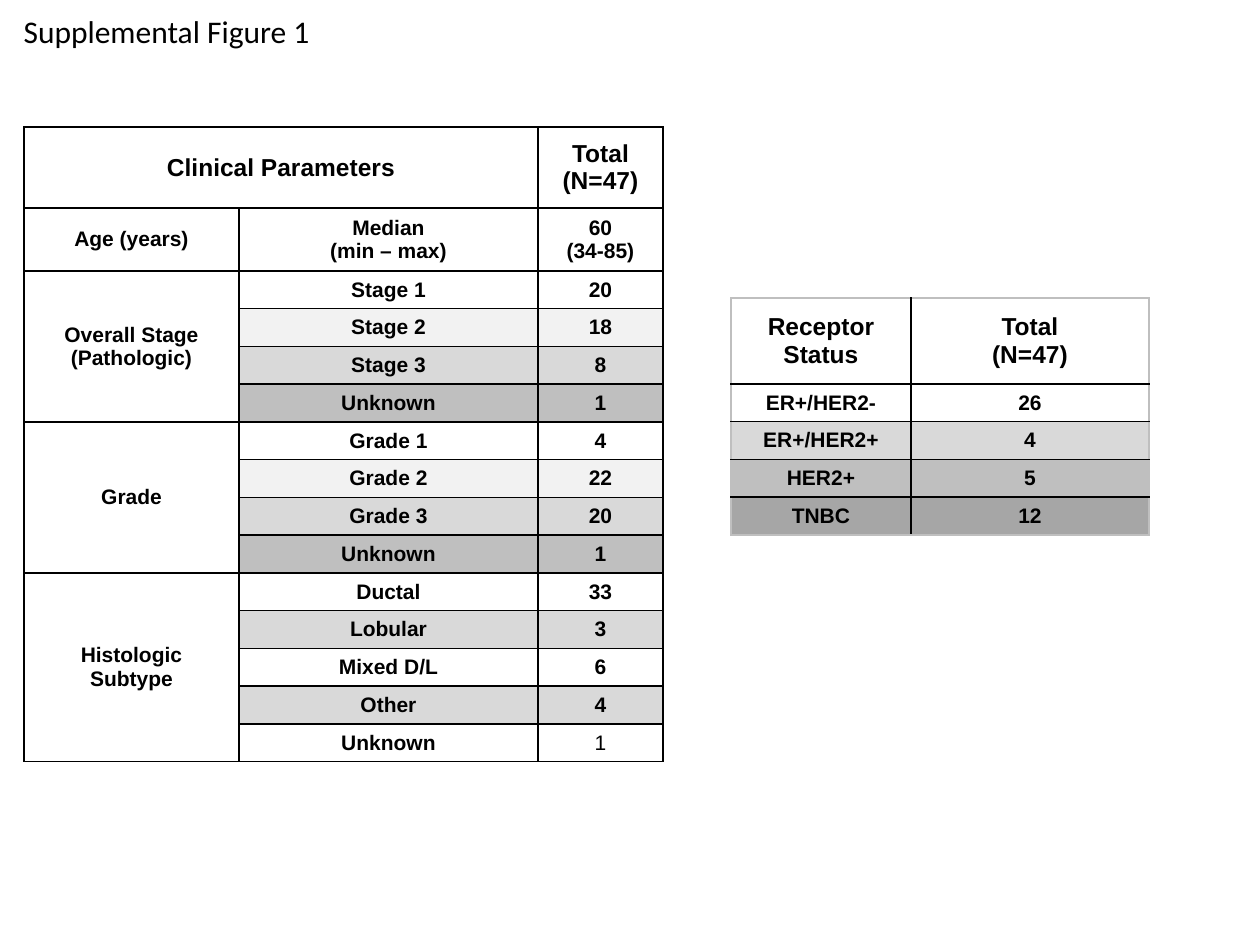
from lxml.etree import SubElement
from pptx import Presentation
from pptx.dml.color import RGBColor
from pptx.enum.text import MSO_ANCHOR, MSO_AUTO_SIZE, PP_ALIGN
from pptx.oxml.ns import qn
from pptx.util import Pt

PX = 914400 / 126
BLACK, WHITE = "000000", "FFFFFF"
PALE, LIGHT, MID, DARK = "F2F2F2", "D9D9D9", "BFBFBF", "A6A6A6"

GROUPS = [
    ("Overall Stage (Pathologic)", [
        ("Stage 1", "20", WHITE), ("Stage 2", "18", PALE),
        ("Stage 3", "8", LIGHT), ("Unknown", "1", MID)]),
    ("Grade", [
        ("Grade 1", "4", WHITE), ("Grade 2", "22", PALE),
        ("Grade 3", "20", LIGHT), ("Unknown", "1", MID)]),
    ("Histologic Subtype", [
        ("Ductal", "33", WHITE), ("Lobular", "3", LIGHT), ("Mixed D/L", "6", WHITE),
        ("Other", "4", LIGHT), ("Unknown", "1", WHITE)]),
]
RECEPTORS = [
    ("ER+/HER2-", "26", WHITE), ("ER+/HER2+", "4", LIGHT),
    ("HER2+", "5", MID), ("TNBC", "12", DARK)]


def px(length):
    """Turn pixels into EMU."""
    return round(length * PX)


def color(value):
    """Turn a hex string into a colour."""
    return RGBColor.from_string(value)


def set_borders(cell, colors):
    """Draw the left, right, top and bottom borders of a cell."""
    properties = cell._tc.get_or_add_tcPr()
    for tag, value in zip(("a:lnL", "a:lnR", "a:lnT", "a:lnB"), colors):
        line = SubElement(properties, qn(tag), w=str(Pt(1)))
        SubElement(SubElement(line, qn("a:solidFill")), qn("a:srgbClr"), val=value)


def fill_cell(cell, text, size=12, fill=WHITE, bold=True):
    """Write centred text on a filled cell."""
    cell.text = text
    cell.vertical_anchor = MSO_ANCHOR.MIDDLE
    cell.fill.solid()
    cell.fill.fore_color.rgb = color(fill)
    for para in cell.text_frame.paragraphs:
        para.alignment = PP_ALIGN.CENTER
        para.font.name, para.font.size, para.font.bold = "Arial", Pt(size), bold
        para.font.color.rgb = color(BLACK)


def add_grid(page, box, widths, head_heights, row_count, edge):
    """Add a bordered table whose body rows share the height left by its head."""
    left, top, width, height = box
    total_rows = len(head_heights) + row_count
    frame = page.shapes.add_table(total_rows, len(widths), *map(px, box))
    table = frame.table
    body_height = (height - sum(head_heights)) / row_count
    for column, column_width in zip(table.columns, widths):
        column.width = px(column_width)
    for row, row_height in zip(table.rows, head_heights + [body_height] * row_count):
        row.height = px(row_height)
    last_row, last_column = total_rows - 1, len(widths) - 1
    for r in range(total_rows):
        for c in range(len(widths)):
            outer = (c == 0, c == last_column, r == 0, r == last_row)
            set_borders(table.cell(r, c), [edge if side else BLACK for side in outer])
    return table


def add_clinical_table(page, box):
    """Add the table of clinical parameters with its grouped rows."""
    row_count = sum(len(rows) for _, rows in GROUPS)
    table = add_grid(page, box, [215, 299, 125], [81, 63], row_count, BLACK)
    table.cell(0, 0).merge(table.cell(0, 1))
    fill_cell(table.cell(0, 0), "Clinical Parameters", 14)
    fill_cell(table.cell(0, 2), "Total\n(N=47)", 14)
    for c, text in enumerate(("Age (years)", "Median\n(min – max)", "60\n(34-85)")):
        fill_cell(table.cell(1, c), text)
    start = 2
    for name, rows in GROUPS:
        table.cell(start, 0).merge(table.cell(start + len(rows) - 1, 0))
        fill_cell(table.cell(start, 0), name)
        for r, (label, count, fill) in enumerate(rows, start):
            fill_cell(table.cell(r, 1), label, fill=fill)
            fill_cell(table.cell(r, 2), count, fill=fill, bold=r <= row_count)
        start += len(rows)


def add_receptor_table(page, box):
    """Add the table of receptor status."""
    table = add_grid(page, box, [180, 238], [86], len(RECEPTORS), MID)
    fill_cell(table.cell(0, 0), "Receptor Status", 14)
    fill_cell(table.cell(0, 1), "Total\n(N=47)", 14)
    for r, (label, count, fill) in enumerate(RECEPTORS, 1):
        fill_cell(table.cell(r, 0), label, fill=fill)
        fill_cell(table.cell(r, 1), count, fill=fill)


def place_title(page, box):
    """Place and format the title."""
    title = page.shapes.title
    title.left, title.top, title.width, title.height = map(px, box)
    frame = title.text_frame
    frame.text = "Supplemental Figure 1"
    frame.auto_size = MSO_AUTO_SIZE.NONE
    frame.word_wrap = False
    frame.vertical_anchor = MSO_ANCHOR.TOP
    para = frame.paragraphs[0]
    para.alignment = PP_ALIGN.LEFT
    para.font.name, para.font.size = "Calibri", Pt(18)
    para.font.color.rgb = color(BLACK)


def main():
    """Build the slide and save it."""
    deck = Presentation()
    deck.slide_width, deck.slide_height = px(1260), px(945)
    page = deck.slides.add_slide(deck.slide_layouts[5])
    place_title(page, (11, 6, 315, 50))
    add_clinical_table(page, (24, 127, 639, 635))
    add_receptor_table(page, (731, 298, 418, 237))
    deck.save("out.pptx")


if __name__ == "__main__":
    main()
